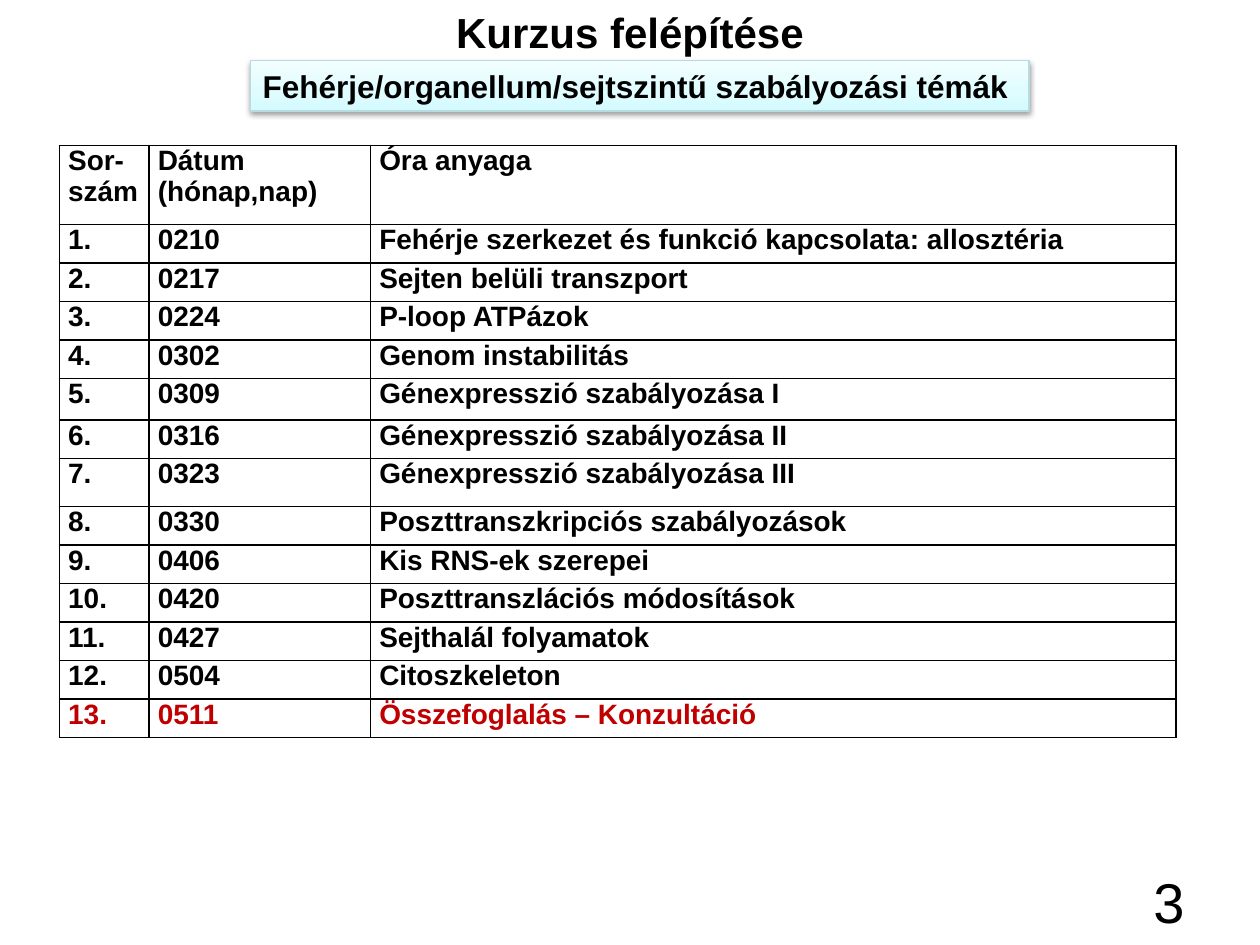
import dataclasses

import lxml.etree
import pptx
import pptx.dml.color
import pptx.enum.shapes
import pptx.enum.text
import pptx.oxml
import pptx.oxml.ns
import pptx.util

Pt = pptx.util.Pt
qn = pptx.oxml.ns.qn
Align = pptx.enum.text.PP_ALIGN
Anchor = pptx.enum.text.MSO_ANCHOR

HUES = {
    "ink": "000000", "red": "C00000", "edge": "B6DCDF",
    "deep": "D3FBFF", "mid": "DFFCFF", "pale": "F2FEFF",
}
COLS = (51.2, 126.6, 460.2)
HEAD = ("Sor-szám", "Dátum (hónap,nap)", "Óra anyaga")
HEAD_HIGH = 45.4


@dataclasses.dataclass
class Lesson:
    date: str
    topic: str
    high: float = 22
    hue: str = "ink"


LESSONS = (
    Lesson("0210", "Fehérje szerkezet és funkció kapcsolata: allosztéria"),
    Lesson("0217", "Sejten belüli transzport"),
    Lesson("0224", "P-loop ATPázok"),
    Lesson("0302", "Genom instabilitás"),
    Lesson("0309", "Génexpresszió szabályozása I", high=23.7),
    Lesson("0316", "Génexpresszió szabályozása II"),
    Lesson("0323", "Génexpresszió szabályozása III", high=27.4),
    Lesson("0330", "Poszttranszkripciós szabályozások"),
    Lesson("0406", "Kis RNS-ek szerepei"),
    Lesson("0420", "Poszttranszlációs módosítások"),
    Lesson("0427", "Sejthalál folyamatok"),
    Lesson("0504", "Citoszkeleton"),
    Lesson("0511", "Összefoglalás – Konzultáció", hue="red"),
)


def color(hue: str) -> pptx.dml.color.RGBColor:
    return pptx.dml.color.RGBColor.from_string(HUES[hue])


def write(frame, text: str, size: float, hue: str = "ink",
          bold: bool = True, align=Align.LEFT) -> None:
    frame.text = text
    para = frame.paragraphs[0]
    para.alignment = align
    font = para.runs[0].font
    font.name, font.size, font.bold = "Arial", Pt(size), bold
    font.color.rgb = color(hue)


def place(shape, left: float, top: float, width: float, height: float) -> None:
    shape.left, shape.top = Pt(left), Pt(top)
    shape.width, shape.height = Pt(width), Pt(height)


def border(cell) -> None:
    props = cell._tc.get_or_add_tcPr()
    for spot, side in enumerate("LRTB"):
        line = pptx.oxml.parse_xml(
            f'<a:ln{side} {pptx.oxml.ns.nsdecls("a")} w="{Pt(1)}"><a:solidFill>'
            f'<a:srgbClr val="{HUES["ink"]}"/></a:solidFill></a:ln{side}>')
        props.insert(spot, line)


def fill_row(table, index: int, texts: tuple[str, ...], high: float,
             hue: str = "ink") -> None:
    table.rows[index].height = Pt(high)
    for cell, text in zip(table.rows[index].cells, texts):
        cell.margin_left = cell.margin_right = Pt(5)
        cell.margin_top = cell.margin_bottom = 0
        cell.fill.background()
        border(cell)
        write(cell.text_frame, text, 16, hue)


def add_plan(slide) -> None:
    """Draw the table of lessons."""
    high = HEAD_HIGH + sum(item.high for item in LESSONS)
    table = slide.shapes.add_table(
        len(LESSONS) + 1, len(COLS), Pt(34), Pt(83), Pt(sum(COLS)), Pt(high)).table
    table.first_row = table.horz_banding = False
    for col, width in zip(table.columns, COLS):
        col.width = Pt(width)
    fill_row(table, 0, HEAD, HEAD_HIGH)
    for num, item in enumerate(LESSONS, 1):
        fill_row(table, num, (f"{num}.", item.date, item.topic), item.high, item.hue)


def add_banner(slide) -> None:
    """Draw the subtitle box with its gradient and soft shadow."""
    box = slide.shapes.add_shape(
        pptx.enum.shapes.MSO_SHAPE.RECTANGLE, Pt(143), Pt(34.5), Pt(445), Pt(29))
    box.fill.gradient()
    box.fill.gradient_angle = 90
    stops = box.element.spPr.find(".//" + qn("a:gsLst"))
    stops.clear()
    for pos, hue in ((0, "deep"), (35, "mid"), (100, "pale")):
        stop = lxml.etree.SubElement(stops, qn("a:gs"), pos=str(pos * 1000))
        lxml.etree.SubElement(stop, qn("a:srgbClr"), val=HUES[hue])
    box.line.color.rgb = color("edge")
    box.line.width = Pt(0.75)

    box.shadow.inherit = False
    shade = lxml.etree.SubElement(
        box.element.spPr.find(qn("a:effectLst")), qn("a:outerShdw"),
        blurRad=str(Pt(3.1)), dist=str(Pt(1.6)), dir="5400000", rotWithShape="0")
    tint = lxml.etree.SubElement(shade, qn("a:srgbClr"), val=HUES["ink"])
    lxml.etree.SubElement(tint, qn("a:alpha"), val="38000")

    frame = box.text_frame
    write(frame, "Fehérje/organellum/sejtszintű szabályozási témák", 18)
    frame.word_wrap = False
    frame.auto_size = pptx.enum.text.MSO_AUTO_SIZE.SHAPE_TO_FIT_TEXT
    frame.vertical_anchor = Anchor.TOP


def main() -> None:
    deck = pptx.Presentation()
    deck.slide_width, deck.slide_height = Pt(720), Pt(540)
    slide = deck.slides.add_slide(deck.slide_layouts[5])

    title = slide.shapes.title
    place(title, 36, 5, 648, 26)
    write(title.text_frame, "Kurzus felépítése", 24, align=Align.CENTER)
    title.text_frame.vertical_anchor = Anchor.MIDDLE

    add_plan(slide)
    add_banner(slide)

    page = slide.shapes.add_textbox(Pt(516), Pt(492), Pt(168), Pt(37.5))
    page.text_frame.word_wrap = True
    write(page.text_frame, "3", 32, bold=False, align=Align.RIGHT)

    deck.save("out.pptx")


if __name__ == "__main__":
    main()
